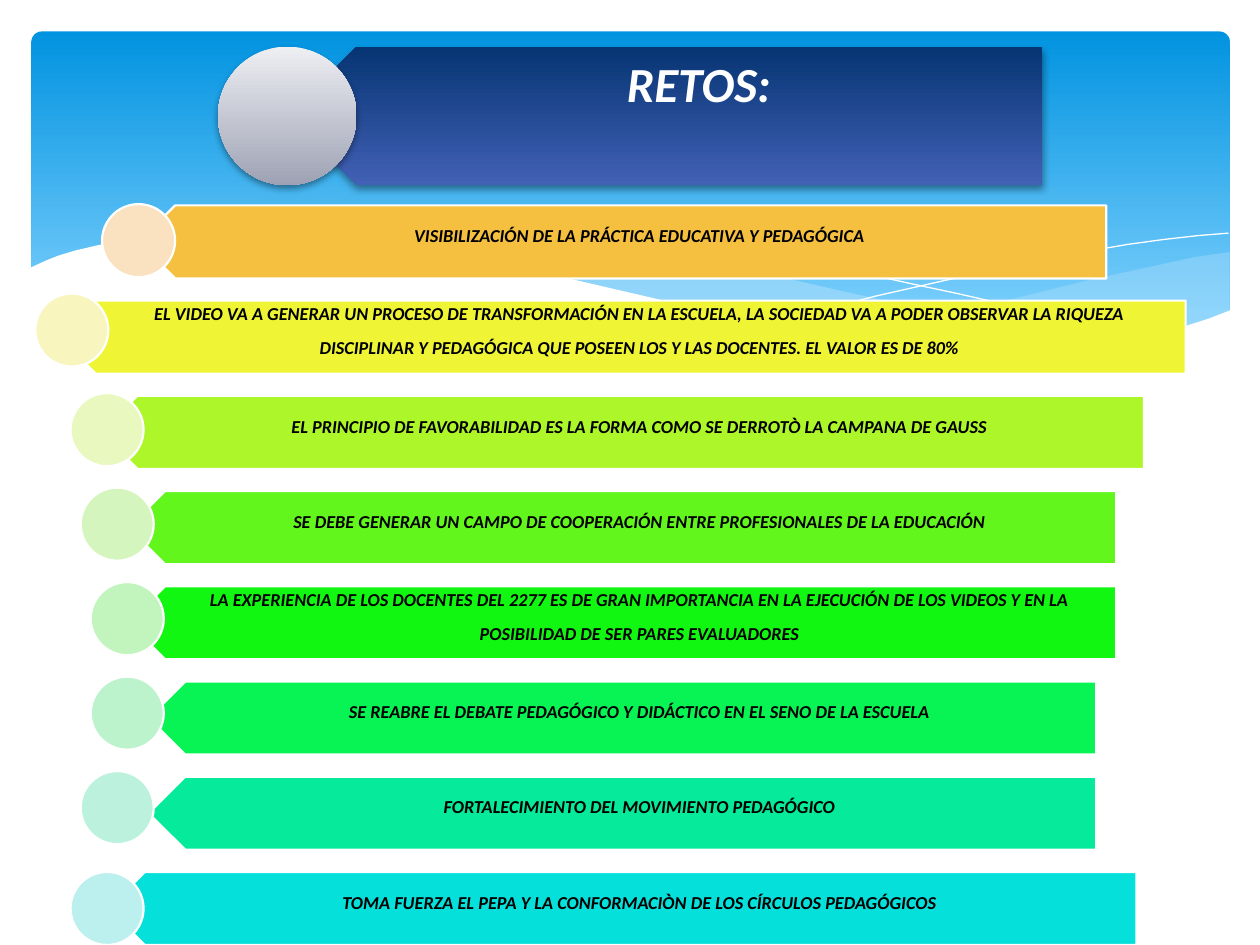
from lxml import etree
from pptx import Presentation
from pptx.dml.color import RGBColor
from pptx.enum.shapes import MSO_SHAPE
from pptx.enum.text import MSO_ANCHOR, PP_ALIGN
from pptx.oxml.ns import qn
from pptx.util import Cm, Pt

ROUNDED = MSO_SHAPE.ROUNDED_RECTANGLE
PENTAGON = MSO_SHAPE.PENTAGON
OVAL = MSO_SHAPE.OVAL
MIDDLE = MSO_ANCHOR.MIDDLE
CENTER = PP_ALIGN.CENTER

FONT = "Calibri"
WHITE = "FFFFFF"
BLACK = "000000"
PALE_BLUE = "C6E7FC"
FIRST_TOP, LAST_TOP, ROW_SIZE = 1.63, 6.92, 0.58
TITLE_TOP, TITLE_SIZE = 0.37, 1.1

CHALLENGES = [
    (1.1, 7.68, "F5C040", 0.81, 1.62, "FAE2C0",
     "VISIBILIZACIÓN DE LA PRÁCTICA EDUCATIVA Y PEDAGÓGICA"),
    (0.47, 8.94, "EFF534", 0.28, 2.33, "F9F5BF",
     "EL VIDEO VA A GENERAR UN PROCESO DE TRANSFORMACIÓN EN LA ESCUELA, "
     "LA SOCIEDAD VA A PODER OBSERVAR LA RIQUEZA DISCIPLINAR Y PEDAGÓGICA "
     "QUE POSEEN LOS Y LAS DOCENTES. EL VALOR ES DE 80%"),
    (0.8, 8.28, "ADF629", 0.56, 3.12, "E8F8BF",
     "EL PRINCIPIO DE FAVORABILIDAD ES LA FORMA COMO SE DERROTÒ LA CAMPANA DE GAUSS"),
    (1.02, 7.84, "62F61D", 0.64, 3.87, "D4F6BE",
     "SE DEBE GENERAR UN CAMPO DE COOPERACIÓN ENTRE PROFESIONALES DE LA EDUCACIÓN"),
    (1.02, 7.84, "11F712", 0.72, 4.62, "C1F5BD",
     "LA EXPERIENCIA DE LOS DOCENTES DEL 2277 ES DE GRAN IMPORTANCIA EN LA "
     "EJECUCIÓN DE LOS VIDEOS Y EN LA POSIBILIDAD DE SER PARES EVALUADORES"),
    (1.18, 7.52, "08F455", 0.72, 5.37, "BDF3CC",
     "SE REABRE EL DEBATE PEDAGÓGICO Y DIDÁCTICO EN EL SENO DE LA ESCUELA"),
    (1.18, 7.52, "06EA9B", 0.64, 6.12, "BCF2DD",
     "FORTALECIMIENTO DEL MOVIMIENTO PEDAGÓGICO"),
    (0.86, 8.16, "05E0DB", 0.56, 6.92, "BCF0EE",
     "TOMA FUERZA EL PEPA Y LA CONFORMACIÒN DE LOS CÍRCULOS PEDAGÓGICOS"),
]

RIGHT_WAVE = [
    (9.76, 2), (9.48, 2.04), (9.21, 2.1), (8.61, 2.23), (8.05, 2.37), (7.53, 2.48),
    (7.06, 2.57), (6.61, 2.65), (6.91, 2.69), (7.19, 2.72), (7.45, 2.75), (7.69, 2.77),
    (8.03, 2.78), (8.35, 2.77), (8.63, 2.75), (8.89, 2.72), (9.13, 2.67), (9.35, 2.62),
    (9.49, 2.57), (9.76, 2.47),
]
MIDDLE_WAVE = [
    (8.93, 2.73), (8.66, 2.69), (8.07, 2.6), (7.41, 2.47), (6.68, 2.31), (6.29, 2.22),
    (5.98, 2.14), (5.69, 2.08), (5.41, 2.03), (5.14, 1.98), (4.89, 1.94), (4.42, 1.89),
    (3.99, 1.86), (3.61, 1.85), (3.28, 1.87), (2.86, 1.91), (3.23, 1.96), (3.62, 2.03),
    (4.04, 2.11), (4.49, 2.22), (4.91, 2.32), (5.3, 2.4), (5.66, 2.48), (6.01, 2.55),
    (6.34, 2.61), (6.65, 2.66), (6.95, 2.7), (7.22, 2.74), (7.48, 2.76), (7.85, 2.78),
    (8.28, 2.78), (8.57, 2.77), (8.93, 2.73),
]
FALLING_LINE = [
    (3.09, 1.95), (3.28, 1.92), (3.53, 1.89), (3.87, 1.87), (4.16, 1.87), (4.5, 1.88),
    (4.89, 1.9), (5.33, 1.94), (5.82, 2), (6.36, 2.08), (6.65, 2.13), (6.95, 2.19),
    (7.27, 2.26), (7.6, 2.33), (7.95, 2.41), (8.31, 2.51), (8.69, 2.61), (9.07, 2.72),
]
RISING_LINE = [
    (6.13, 2.57), (6.53, 2.46), (6.95, 2.35), (7.48, 2.23), (8.06, 2.1), (8.66, 1.99),
    (8.95, 1.94), (9.24, 1.9), (9.51, 1.87), (9.75, 1.85),
]
WHITE_WAVE = [
    (9.77, 2.46), (9.59, 2.53), (9.4, 2.59), (9.2, 2.65), (8.99, 2.69), (8.75, 2.73),
    (8.5, 2.75), (8.23, 2.77), (7.93, 2.76), (7.61, 2.75), (7.26, 2.72), (6.88, 2.68),
    (6.48, 2.62), (6.03, 2.54), (5.55, 2.45), (5.03, 2.33), (4.47, 2.2), (3.91, 2.07),
    (3.4, 1.97), (2.92, 1.9), (2.5, 1.86), (2.11, 1.84), (1.77, 1.84), (1.46, 1.85),
    (1.19, 1.87), (0.95, 1.91), (0.76, 1.95), (0.59, 1.99), (0.46, 2.03), (0.36, 2.07),
    (0.23, 2.13), (0.23, 3.29), (9.77, 3.29),
]


def inches(value):
    return Cm(value * 2.54)


def color(value):
    return RGBColor.from_string(value)


def add_child(parent, tag, **attributes):
    return etree.SubElement(parent, qn(tag), attributes)


def style_shape(shape, fill=None, line=None, width=0):
    shape.shadow.inherit = False
    if isinstance(fill, tuple):
        shape.fill.gradient()
        shape.fill.gradient_angle = 270
        for stop, (position, value) in zip(shape.fill.gradient_stops, fill):
            stop.position = position
            stop.color.rgb = color(value)
    elif fill:
        shape.fill.solid()
        shape.fill.fore_color.rgb = color(fill)
    else:
        shape.fill.background()
    if line:
        shape.line.color.rgb = color(line)
        shape.line.width = Pt(width)
    else:
        shape.line.fill.background()


def add_preset(slide, kind, box, fill, line=None, rotation=0):
    shape = slide.shapes.add_shape(kind, *map(inches, box))
    style_shape(shape, fill, line, 1.25)
    shape.rotation = rotation
    return shape


def add_curve(slide, points, fill=None, line=None, opacity=100):
    start, *others = [(inches(x), inches(y)) for x, y in points]
    builder = slide.shapes.build_freeform(*start)
    builder.add_line_segments(others, close=fill is not None)
    shape = builder.convert_to_shape()
    style_shape(shape, fill, line)
    if opacity < 100:
        solid = shape.element.spPr.find(qn("a:solidFill"))
        add_child(solid[0], "a:alpha", val=str(opacity * 1000))


def add_shadow(shape):
    effects = shape.element.spPr.find(qn("a:effectLst"))
    shadow = add_child(effects, "a:outerShdw", blurRad=str(Pt(4)), dist=str(Pt(2)),
                       dir="5400000", rotWithShape="0")
    shade = add_child(shadow, "a:srgbClr", val=BLACK)
    add_child(shade, "a:alpha", val="38000")


def add_label(slide, box, text, size, value, insets):
    frame = slide.shapes.add_textbox(*map(inches, box)).text_frame
    frame.word_wrap = True
    frame.vertical_anchor = MIDDLE
    left, right, vertical = map(inches, insets)
    frame.margin_left, frame.margin_right = left, right
    frame.margin_top = frame.margin_bottom = vertical
    paragraph = frame.paragraphs[0]
    paragraph.alignment = CENTER
    paragraph.line_spacing = 0.9
    paragraph.space_after = Pt(size * 0.35)
    run = paragraph.add_run()
    run.text = text
    run.font.name = FONT
    run.font.size = Pt(size)
    run.font.bold = run.font.italic = True
    run.font.color.rgb = color(value)
    return paragraph


def add_backdrop(slide):
    panel = add_preset(slide, ROUNDED, (0.25, 0.25, 9.51, 2.7),
                       ((0, "0293E0"), (0.9, "83D3FE")))
    panel.adjustments[0] = 0.03
    add_curve(slide, RIGHT_WAVE, PALE_BLUE, opacity=29)
    add_curve(slide, MIDDLE_WAVE, PALE_BLUE, opacity=40)
    add_curve(slide, FALLING_LINE, line=WHITE)
    add_curve(slide, RISING_LINE, line=WHITE)
    add_curve(slide, WHITE_WAVE, WHITE)


def add_challenge(slide, top, challenge):
    left, width, fill, circle_left, circle_top, circle_fill, text = challenge
    add_preset(slide, PENTAGON, (left, top, width, ROW_SIZE), fill, WHITE, 180)
    paragraph = add_label(slide, (left + 0.15, top, width - 0.15, ROW_SIZE),
                          text, 18, BLACK, (0.26, 0.14, 0.07))
    paragraph.runs[0].font._element.set("baseline", "30000")
    add_preset(slide, OVAL, (circle_left, circle_top, ROW_SIZE, ROW_SIZE), circle_fill, WHITE)


def add_title(slide):
    banner = add_preset(slide, PENTAGON, (2.28, TITLE_TOP, 5.99, TITLE_SIZE),
                        ((0, "4260B5"), (1, "063573")), rotation=180)
    add_shadow(banner)
    paragraph = add_label(slide, (2.56, TITLE_TOP, 5.71, TITLE_SIZE),
                          "RETOS:", 28, WHITE, (0.48, 0.22, 0.12))
    paragraph.add_line_break()
    add_child(paragraph._p[-1], "a:rPr", sz="2800")
    add_child(paragraph._p, "a:endParaRPr", sz="2800")
    circle = add_preset(slide, OVAL, (1.73, TITLE_TOP, TITLE_SIZE, TITLE_SIZE),
                        ((0, "EEEFF3"), (1, "9EA2B4")))
    add_shadow(circle)


def main():
    presentation = Presentation()
    presentation.slide_width, presentation.slide_height = Cm(25.4), Cm(19.05)
    slide = presentation.slides.add_slide(presentation.slide_layouts[6])
    add_backdrop(slide)
    pitch = (LAST_TOP - FIRST_TOP) / (len(CHALLENGES) - 1)
    for index, challenge in enumerate(CHALLENGES):
        add_challenge(slide, FIRST_TOP + index * pitch, challenge)
    add_title(slide)
    presentation.save("out.pptx")


if __name__ == "__main__":
    main()
